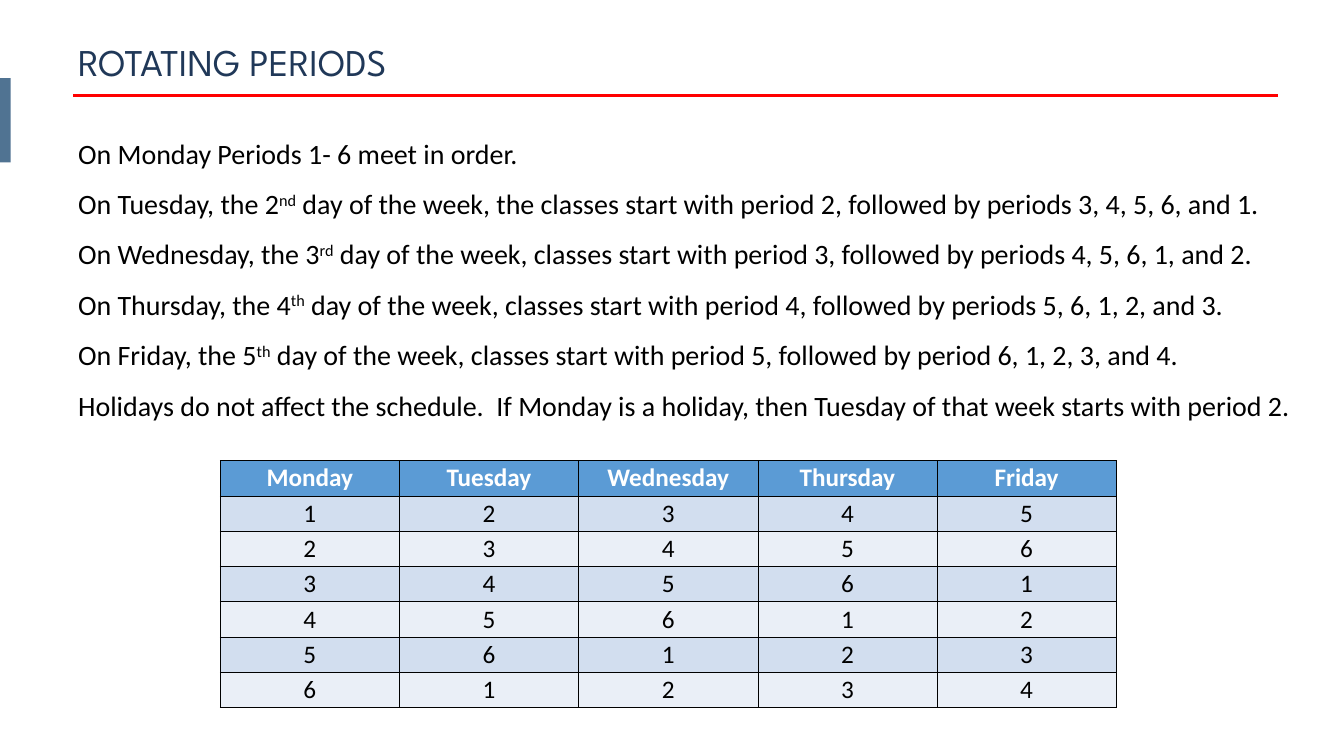
from lxml.etree import SubElement
from pptx import Presentation
from pptx.dml.color import RGBColor as RGB
from pptx.enum.shapes import MSO_CONNECTOR as LINK, MSO_SHAPE as SHAPE
from pptx.enum.text import MSO_ANCHOR as ANCHOR, MSO_AUTO_SIZE as FIT, PP_ALIGN as ALIGN
from pptx.oxml.ns import qn
from pptx.util import Inches, Pt

TITLE = "ROTATING PERIODS"
RULES = [  # text between ^ marks is raised
    "On Monday Periods 1- 6 meet in order.",
    "On Tuesday, the 2^nd^ day of the week, the classes start with period 2, followed by periods 3, 4, 5, 6, and 1.",
    "On Wednesday, the 3^rd^ day of the week, classes start with period 3, followed by periods 4, 5, 6, 1, and 2.",
    "On Thursday, the 4^th^ day of the week, classes start with period 4, followed by periods 5, 6, 1, 2, and 3.",
    "On Friday, the 5^th^ day of the week, classes start with period 5, followed by period 6, 1, 2, 3, and 4.",
    "Holidays do not affect the schedule.  If Monday is a holiday, then Tuesday of that week starts with period 2.",
]
DAYS = ["Monday", "Tuesday", "Wednesday", "Thursday", "Friday"]
PERIODS = 6
THEME = {
    "head": ("League Spartan", 54, "203858"),
    "body": ("Calibri", 40, "000000"),
    "day": ("Calibri", 36, "FFFFFF"),
    "cell": ("Calibri", 36, "000000"),
    "rule": "FF0000",
    "bar": "507392",
    "top": "5B9BD5",
    "bands": ("D2DEEF", "EAEFF7"),
    "grid": "000000",
}
LEFT = 1.45
COL, ROW = 3.556, 0.7


def style(run, key, bold=False):
    name, size, color = THEME[key]
    font = run.font
    font.name, font.size, font.bold = name, Pt(size), bold
    font.color.rgb = RGB.from_string(color)


def paint(fill, color):
    fill.solid()
    fill.fore_color.rgb = RGB.from_string(color)


def place(shape, *box):
    shape.left, shape.top, shape.width, shape.height = map(Inches, box)
    frame = shape.text_frame
    frame.word_wrap = True
    frame.auto_size = FIT.SHAPE_TO_FIT_TEXT
    frame.vertical_anchor = ANCHOR.TOP
    return frame


def add_title(slide):
    frame = place(slide.shapes.title, LEFT, 0.72, 13.03, 1.01)
    frame.text = TITLE
    para = frame.paragraphs[0]
    para.alignment = ALIGN.LEFT
    para.space_after = Pt(12)
    style(para.runs[0], "head")


def add_rules(slide):
    frame = place(slide.placeholders[1], LEFT, 2.32, 24.43, 6.06)
    for i, rule in enumerate(RULES):
        para = frame.add_paragraph() if i else frame.paragraphs[0]
        para.line_spacing = 1.5
        para.space_before = Pt(0)
        props = para._p.get_or_add_pPr()
        props.set("marL", "0")
        props.set("indent", "0")
        SubElement(props, qn("a:buNone"))
        for j, part in enumerate(rule.split("^")):
            run = para.add_run()
            run.text = part
            style(run, "body")
            if j % 2:
                run._r.get_or_add_rPr().set("baseline", "30000")


def add_line(slide):
    y = Inches(1.9)
    line = slide.shapes.add_connector(LINK.STRAIGHT, Inches(LEFT), y, Inches(25.36), y)
    line.line.color.rgb = RGB.from_string(THEME["rule"])
    line.line.width = Pt(4)
    SubElement(line._element.spPr, qn("a:effectLst"))


def add_bar(slide):
    box = map(Inches, (0, 1.55, 0.21, 1.67))
    bar = slide.shapes.add_shape(SHAPE.RECTANGLE, *box)
    bar.shadow.inherit = False
    paint(bar.fill, THEME["bar"])
    bar.line.fill.background()


def edge(cell):
    """Draw a thin border on all four sides; call before filling."""
    props = cell._tc.get_or_add_tcPr()
    for side in "LRTB":
        line = SubElement(props, qn(f"a:ln{side}"), w=str(Pt(1)))
        fill = SubElement(line, qn("a:solidFill"))
        SubElement(fill, qn("a:srgbClr"), val=THEME["grid"])


def add_grid(slide):
    rows, cols = PERIODS + 1, len(DAYS)
    box = map(Inches, (4.37, 9.14, COL * cols, ROW * rows))
    table = slide.shapes.add_table(rows, cols, *box).table
    for col in table.columns:
        col.width = Inches(COL)
    for r, row in enumerate(table.rows):
        row.height = Inches(ROW)
        for c, cell in enumerate(row.cells):
            edge(cell)
            paint(cell.fill, THEME["bands"][(r - 1) % 2] if r else THEME["top"])
            cell.margin_top = cell.margin_bottom = Inches(0.04)
            cell.vertical_anchor = ANCHOR.MIDDLE
            cell.text = str((r - 1 + c) % PERIODS + 1) if r else DAYS[c]
            para = cell.text_frame.paragraphs[0]
            para.alignment = ALIGN.CENTER
            style(para.runs[0], "cell" if r else "day", bold=not r)


def main():
    deck = Presentation()
    deck.slide_width, deck.slide_height = Inches(26.67), Inches(15)
    slide = deck.slides.add_slide(deck.slide_layouts[1])
    for add in (add_line, add_rules, add_bar, add_title, add_grid):
        add(slide)
    deck.save("out.pptx")


if __name__ == "__main__":
    main()
